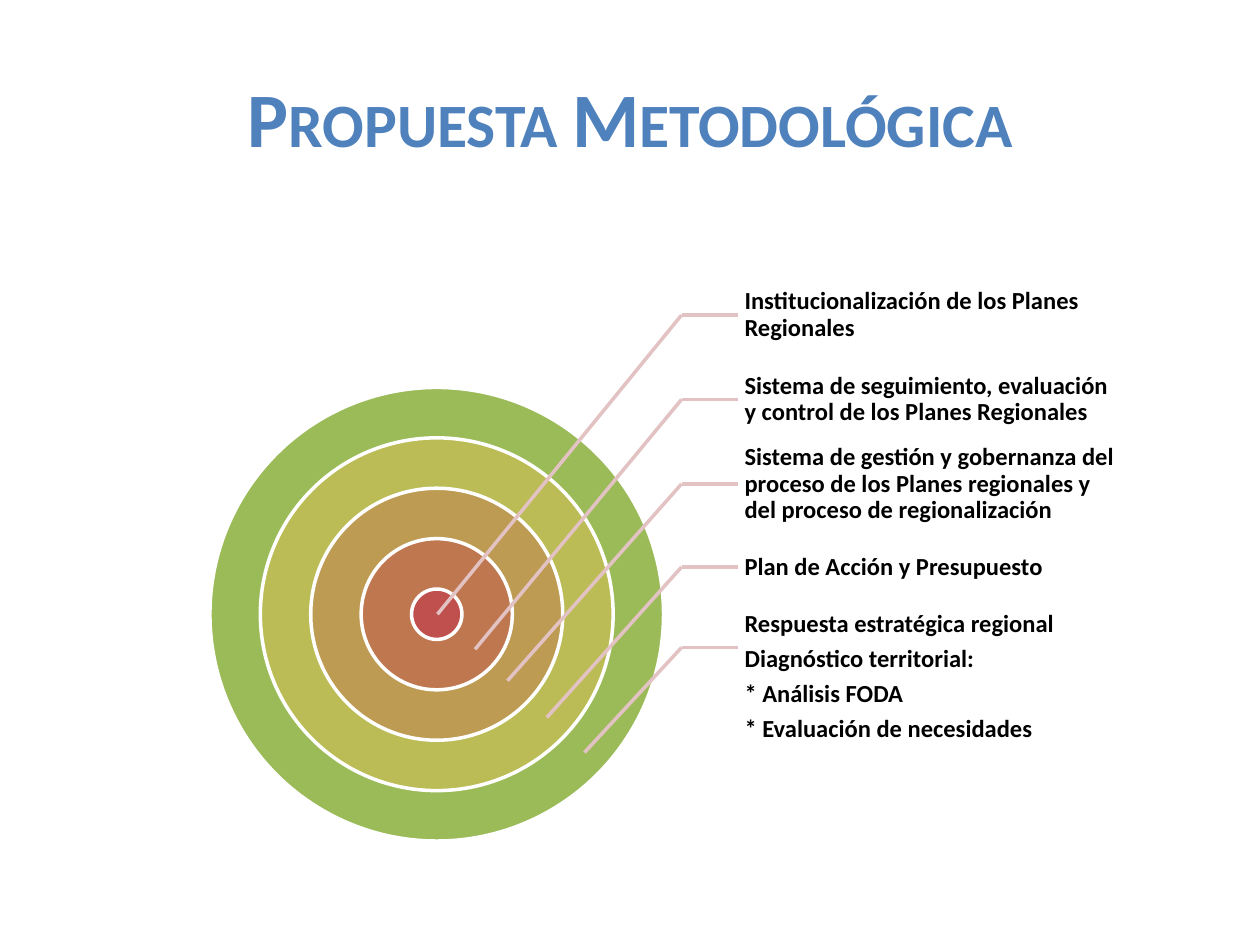
from lxml.etree import SubElement
from pptx import Presentation
from pptx.dml.color import RGBColor
from pptx.enum.shapes import MSO_CONNECTOR as Link, MSO_SHAPE as Shape
from pptx.enum.text import MSO_ANCHOR as Anchor, PP_ALIGN as Align
from pptx.oxml.ns import qn
from pptx.util import Pt

RINGS = ["9BBB59", "BCBC56", "BD9B53", "BF7750", "C0504D"]
CORE, STEP = 28.8, 57.6
HUB = (129.6, 193)
BEND, STOP = 269.5, 302
LABELS = [
    (22, (130, 193), ["Institucionalización de los Planes Regionales"]),
    (70.25, (151.5, 213), ["Sistema de seguimiento, evaluación y control de los Planes Regionales"]),
    (118.5, (170, 231), ["Sistema de gestión y gobernanza del proceso de los Planes regionales "
                         "y del proceso de regionalización"]),
    (166, (192.5, 252), ["Plan de Acción y Presupuesto"]),
    (212, (214, 272), ["Respuesta estratégica regional", "Diagnóstico territorial:",
                       "* Análisis FODA", "* Evaluación de necesidades"]),
]


def paint(target, color):
    if hasattr(target, "solid"):
        target.solid()
        target = target.fore_color
    target.rgb = RGBColor.from_string(color)


def style(para, size, color):
    for run in para.runs:
        run.font.name = "Calibri"
        run.font.size = Pt(size)
        run.font.bold = True
        paint(run.font.color, color)


def head(slide, left, top, width, height):
    title = slide.shapes.title
    title.left, title.top, title.width, title.height = map(Pt, (left, top, width, height))
    frame = title.text_frame
    frame.text = "Propuesta Metodológica"
    frame.vertical_anchor = Anchor.MIDDLE
    para = frame.paragraphs[0]
    para.alignment = Align.CENTER
    style(para, 44, "4F81BD")
    para.runs[0]._r.get_or_add_rPr().set("cap", "small")


def target(slide, left, top):
    for rank, color in enumerate(RINGS):
        size = CORE + STEP * (len(RINGS) - 1 - rank)
        ring = slide.shapes.add_shape(
            Shape.OVAL, Pt(left + HUB[0] - size / 2), Pt(top + HUB[1] - size / 2),
            Pt(size), Pt(size))
        ring.shadow.inherit = False
        paint(ring.fill, color)
        paint(ring.line.fill, "FFFFFF")
        ring.line.width = Pt(2)


def label(slide, left, top, width, height, lines):
    box = slide.shapes.add_textbox(Pt(left), Pt(top), Pt(width), Pt(height))
    frame = box.text_frame
    frame.word_wrap = True
    frame.vertical_anchor = Anchor.MIDDLE
    frame.margin_left = Pt(8)
    frame.margin_top = frame.margin_right = frame.margin_bottom = Pt(1.4)
    frame.text = "\n".join(lines)
    for para in frame.paragraphs:
        para.alignment = Align.LEFT
        para.line_spacing = 0.9
        para.space_after = Pt(4.9)
        style(para, 14, "000000")


def stroke(slide, start, end):
    line = slide.shapes.add_connector(Link.STRAIGHT, *map(Pt, (*start, *end)))
    paint(line.line.fill, "E2C2C2")
    line.line.width = Pt(2)
    SubElement(line._element.spPr, qn("a:effectLst"))


def legend(slide, left, top):
    for level, tip, lines in LABELS:
        many = len(lines) > 1
        drop, height = (-13.6, 61.2) if many else (-22.5, 45.4)
        label(slide, left + 297.5, top + level + drop, 225.4, height, lines)
        bend = (left + BEND, top + level)
        stroke(slide, bend, (left + STOP, top + level))
        stroke(slide, bend, (left + tip[0], top + tip[1]))


def main():
    deck = Presentation()
    deck.slide_width, deck.slide_height = Pt(720), Pt(540)
    slide = deck.slides.add_slide(deck.slide_layouts[5])
    head(slide, 36, 21.6, 648, 90)
    target(slide, 120, 158)
    legend(slide, 120, 158)
    deck.save("out.pptx")


if __name__ == "__main__":
    main()
